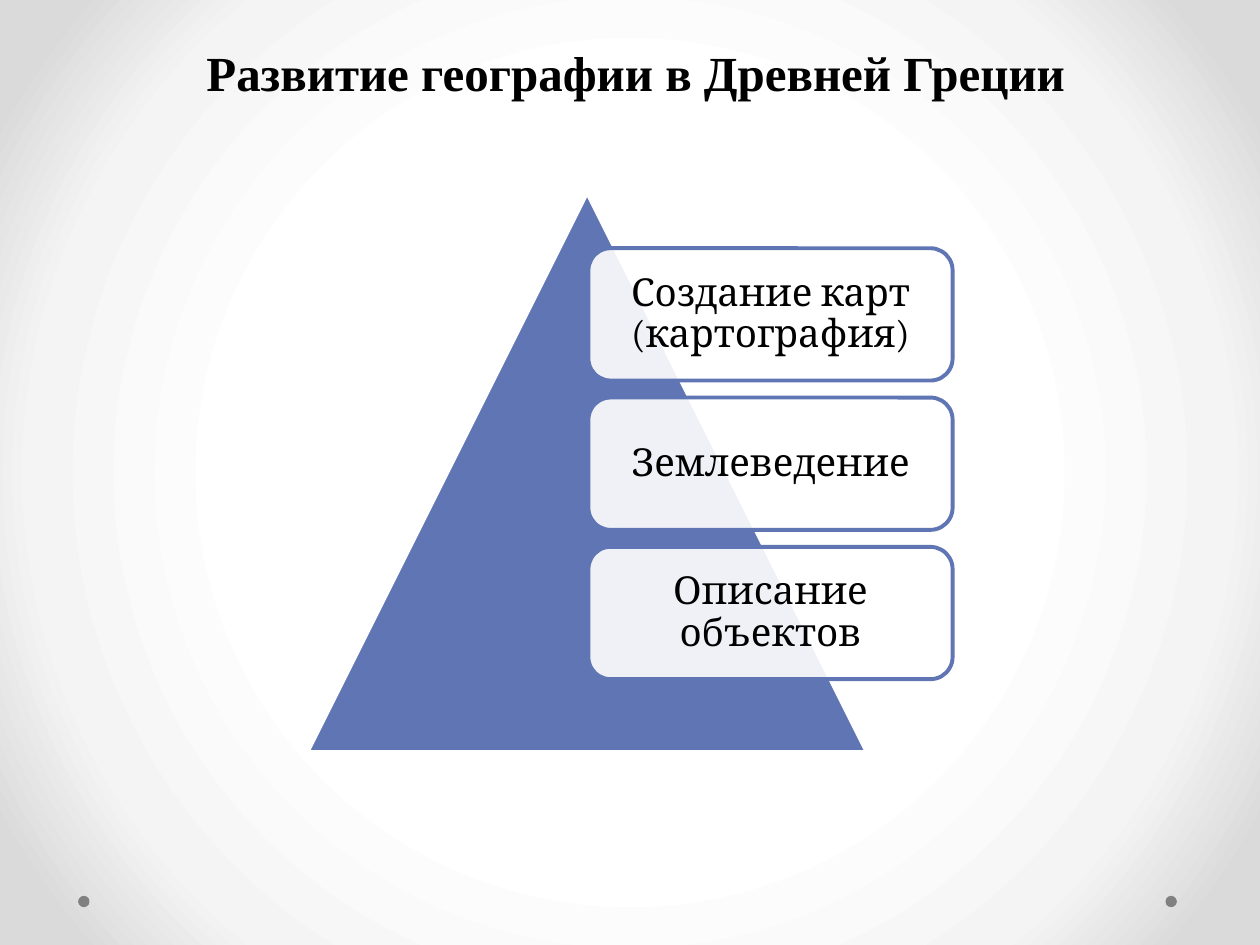
import pptx
import pptx.dml.color
import pptx.enum.shapes
import pptx.enum.text
import pptx.oxml
import pptx.oxml.ns
import pptx.util
from pptx.util import Inches

RGBColor = pptx.dml.color.RGBColor
SHAPE = pptx.enum.shapes.MSO_SHAPE
ALIGN = pptx.enum.text.PP_ALIGN
ANCHOR = pptx.enum.text.MSO_ANCHOR

BLUE = RGBColor(0x60, 0x76, 0xB4)
GRAY = RGBColor(0x80, 0x80, 0x80)
WHITE = RGBColor(0xFF, 0xFF, 0xFF)
BLACK = RGBColor(0x00, 0x00, 0x00)
BACKGROUND_STOPS = [(50, RGBColor(0xFF, 0xFF, 0xFF)),
                    (76, RGBColor(0xF4, 0xF4, 0xF4)),
                    (92, RGBColor(0xDA, 0xDA, 0xDA))]

TOPICS = ["Создание карт (картография)", "Землеведение", "Описание объектов"]
TOPIC_TOP = 1.97
TOPIC_STEP = 1.185


def set_background(page):
    """Fill the page with a gradient that darkens away from the centre."""
    stops = "".join(f'<a:gs pos="{place * 1000}"><a:srgbClr val="{color}"/></a:gs>'
                    for place, color in BACKGROUND_STOPS)
    background = pptx.oxml.parse_xml(
        f'<p:bg {pptx.oxml.ns.nsdecls("p", "a")}><p:bgPr>'
        f'<a:gradFill rotWithShape="1"><a:gsLst>{stops}</a:gsLst>'
        '<a:path path="circle"><a:fillToRect l="50000" t="50000" r="50000" b="50000"/>'
        '</a:path></a:gradFill><a:effectLst/></p:bgPr></p:bg>')
    page.element.cSld.insert(0, background)


def add_filled_shape(page, kind, left, top, width, height, fill, line=None):
    shape = page.shapes.add_shape(kind, Inches(left), Inches(top),
                                  Inches(width), Inches(height))
    shape.shadow.inherit = False
    shape.fill.solid()
    shape.fill.fore_color.rgb = fill
    if line is None:
        shape.line.fill.background()
    else:
        shape.line.color.rgb = line
        shape.line.width = pptx.util.Pt(2.25)
    return shape


def write_text(shape, text, font, size, anchor, bold=False):
    frame = shape.text_frame
    frame.word_wrap = True
    frame.vertical_anchor = anchor
    para = frame.paragraphs[0]
    para.alignment = ALIGN.CENTER
    run = para.add_run()
    run.text = text
    run.font.name = font
    run.font.size = pptx.util.Pt(size)
    run.font.bold = bold
    run.font.color.rgb = BLACK
    return para


def add_title(page, text):
    title = page.shapes.title
    title.left, title.top = Inches(1.03), Inches(0.29)
    title.width, title.height = Inches(8.03), Inches(0.57)
    write_text(title, text, "Times New Roman", 28, ANCHOR.TOP, bold=True)


def add_topic(page, text, top):
    box = add_filled_shape(page, SHAPE.ROUNDED_RECTANGLE, 4.67, top, 2.89, 1.05, WHITE, BLUE)
    # Slightly see-through, so the pyramid shows behind the box
    color = box.fill._xPr.find(".//" + pptx.oxml.ns.qn("a:srgbClr"))
    color.append(pptx.oxml.parse_xml(
        f'<a:alpha {pptx.oxml.ns.nsdecls("a")} val="90000"/>'))
    frame = box.text_frame
    frame.margin_left = frame.margin_right = Inches(0.14)
    frame.margin_top = frame.margin_bottom = Inches(0.14)
    para = write_text(box, text, "Cambria", 22, ANCHOR.MIDDLE)
    para.line_spacing = 0.9


def main():
    deck = pptx.Presentation()
    deck.slide_width, deck.slide_height = Inches(10), Inches(7.5)
    page = deck.slides.add_slide(deck.slide_layouts[5])
    set_background(page)

    # Corner dots
    for left in (9.25, 0.62):
        add_filled_shape(page, SHAPE.OVAL, left, 7.11, 0.09, 0.09, GRAY)

    add_title(page, "Развитие географии в Древней Греции")

    # Pyramid with its topics
    add_filled_shape(page, SHAPE.ISOSCELES_TRIANGLE, 2.44, 1.53, 4.44, 4.44, BLUE, WHITE)
    for index, topic in enumerate(TOPICS):
        add_topic(page, topic, TOPIC_TOP + index * TOPIC_STEP)

    deck.save("out.pptx")


if __name__ == "__main__":
    main()
